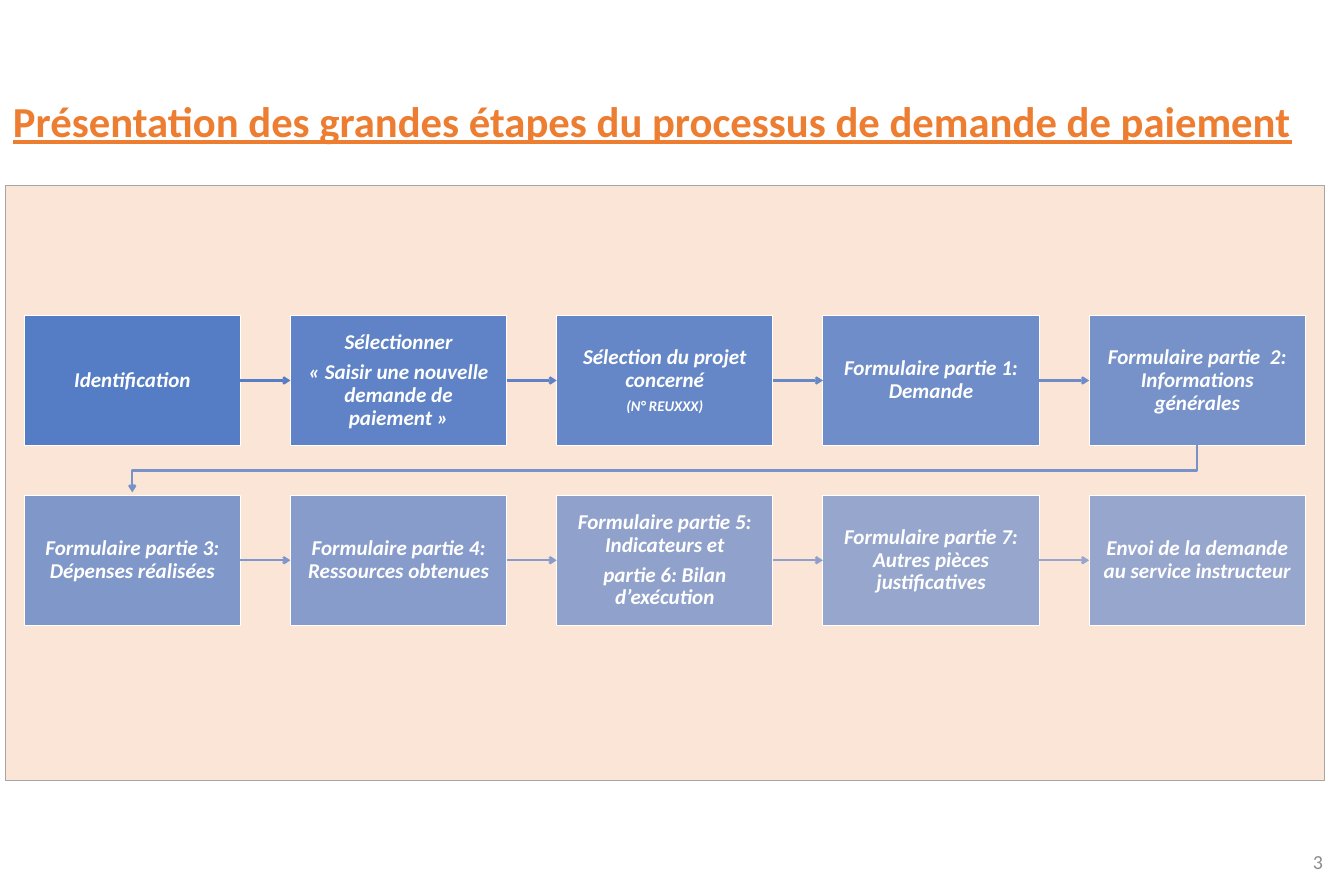
from lxml.etree import SubElement
from pptx import Presentation
from pptx.dml.color import RGBColor
from pptx.enum.shapes import MSO_CONNECTOR, MSO_SHAPE
from pptx.enum.text import MSO_ANCHOR, MSO_AUTO_SIZE, PP_ALIGN
from pptx.oxml.ns import qn
from pptx.util import Pt

PX = 9144
FONT = "Calibri"
ORANGE = RGBColor(0xED, 0x7D, 0x31)
PEACH = RGBColor(0xFB, 0xE5, 0xD6)
GREY = RGBColor(0xA5, 0xA5, 0xA5)
NUMBER_GREY = RGBColor(0x8C, 0x8C, 0x8C)
BLUE = RGBColor(0x44, 0x72, 0xC4)
WHITE = RGBColor(0xFF, 0xFF, 0xFF)
ARROW_BLUES = [
    RGBColor(0x56, 0x7D, 0xC6), RGBColor(0x5F, 0x82, 0xC6), RGBColor(0x66, 0x88, 0xC7),
    RGBColor(0x6E, 0x8D, 0xC8), RGBColor(0x77, 0x92, 0xC9), RGBColor(0x7F, 0x97, 0xCA),
    RGBColor(0x88, 0x9C, 0xCB), RGBColor(0x8F, 0xA1, 0xCB), RGBColor(0x97, 0xA6, 0xCC),
]

COLUMNS = 5
STEP_WIDTH, STEP_HEIGHT = 285, 171
STEP_PITCH, ROW_PITCH = 351, 237
STEPS = [
    [("Identification", 20)],
    [("Sélectionner", 20), ("« Saisir une nouvelle demande de paiement »", 20)],
    [("Sélection du projet concerné", 20), ("(N° REUXXX)", 14)],
    [("Formulaire partie 1: Demande", 20)],
    [("Formulaire partie  2: Informations générales", 20)],
    [("Formulaire partie 3: Dépenses réalisées", 20)],
    [("Formulaire partie 4: Ressources obtenues", 20)],
    [("Formulaire partie 5: Indicateurs et", 20), ("partie 6: Bilan d’exécution", 20)],
    [("Formulaire partie 7: Autres pièces justificatives", 20)],
    [("Envoi de la demande au service instructeur", 20)],
]


def emu(*lengths):
    return [length * PX for length in lengths]


def write(para, text, size, color, align=PP_ALIGN.LEFT, bold=False, italic=False, underline=False):
    para.alignment = align
    span = para.add_run()
    span.text = text
    font = span.font
    font.name, font.size, font.color.rgb = FONT, Pt(size), color
    font.bold, font.italic, font.underline = bold, italic, underline


def set_frame(frame, anchor, inset_x, inset_y):
    frame.word_wrap = True
    frame.auto_size = MSO_AUTO_SIZE.NONE
    frame.vertical_anchor = anchor
    frame.margin_left = frame.margin_right = inset_x * PX
    frame.margin_top = frame.margin_bottom = inset_y * PX


def add_rectangle(page, box, fill, line, width):
    shape = page.shapes.add_shape(MSO_SHAPE.RECTANGLE, *emu(*box))
    shape.shadow.inherit = False
    shape.fill.solid()
    shape.fill.fore_color.rgb = fill
    shape.line.color.rgb = line
    shape.line.width = Pt(width)
    return shape


def style_arrow(arrow, color):
    arrow.line.color.rgb = color
    arrow.line.width = Pt(2.25)
    SubElement(arrow.line._get_or_add_ln(), qn("a:tailEnd"), type="arrow")


def add_title(page, box):
    title = page.shapes.title
    title.left, title.top, title.width, title.height = emu(*box)
    set_frame(title.text_frame, MSO_ANCHOR.TOP, 10, 5)
    title.text_frame.margin_right = 0
    write(title.text_frame.paragraphs[0],
          "Présentation des grandes étapes du processus de demande de paiement",
          40.5, ORANGE, bold=True, underline=True)


def add_step(page, box, lines, alpha):
    step = add_rectangle(page, box, BLUE, WHITE, 1)
    solid = step.fill._xPr.find(qn("a:solidFill"))
    SubElement(solid[0], qn("a:alpha"), val=str(alpha))
    frame = step.text_frame
    set_frame(frame, MSO_ANCHOR.MIDDLE, 16, 16)
    for index, (text, size) in enumerate(lines):
        para = frame.add_paragraph() if index else frame.paragraphs[0]
        para.line_spacing = 0.9
        para.space_before = Pt(7 if index else 0)
        write(para, text, size, WHITE, PP_ALIGN.CENTER, bold=True, italic=True)
    return step


def add_straight_arrow(page, start, end, color):
    arrow = page.shapes.add_connector(MSO_CONNECTOR.STRAIGHT, 0, 0, 0, 0)
    arrow.begin_connect(start, 3)
    arrow.end_connect(end, 1)
    style_arrow(arrow, color)
    SubElement(arrow._element.spPr, qn("a:effectLst"))


def add_return_arrow(page, start, end, color):
    start_x, end_x = start.left + start.width // 2, end.left + end.width // 2
    bottom, tip = start.top + start.height, end.top - 4 * PX
    turn = (bottom + end.top) // 2
    builder = page.shapes.build_freeform(start_x, bottom)
    builder.add_line_segments([(start_x, turn), (end_x, turn), (end_x, tip)], close=False)
    arrow = builder.convert_to_shape()
    arrow.shadow.inherit = False
    arrow.fill.background()
    style_arrow(arrow, color)


def add_process(page, box):
    left, top, width, height = box
    add_rectangle(page, box, PEACH, GREY, 0.75)
    first_left = left + 25
    first_top = top + 171
    steps = []
    for index, lines in enumerate(STEPS):
        row, column = divmod(index, COLUMNS)
        step_box = (first_left + column * STEP_PITCH, first_top + row * ROW_PITCH,
                    STEP_WIDTH, STEP_HEIGHT)
        steps.append(add_step(page, step_box, lines, 90000 - 4500 * min(index, 8)))
    for start, end, color in zip(steps, steps[1:], ARROW_BLUES):
        add_arrow = add_straight_arrow if start.top == end.top else add_return_arrow
        add_arrow(page, start, end, color)


def add_page_number(page, box):
    number = page.shapes.add_textbox(*emu(*box))
    set_frame(number.text_frame, MSO_ANCHOR.MIDDLE, 10, 5)
    write(number.text_frame.paragraphs[0], "3", 18.9, NUMBER_GREY, PP_ALIGN.RIGHT)


def main():
    deck = Presentation()
    deck.slide_width, deck.slide_height = emu(1772, 1181)
    page = deck.slides.add_slide(deck.slide_layouts[5])
    add_title(page, (7, 120, 1713, 78))
    add_process(page, (7, 245, 1739, 784))
    add_page_number(page, (1355, 1114, 399, 42))
    deck.save("out.pptx")


if __name__ == "__main__":
    main()
